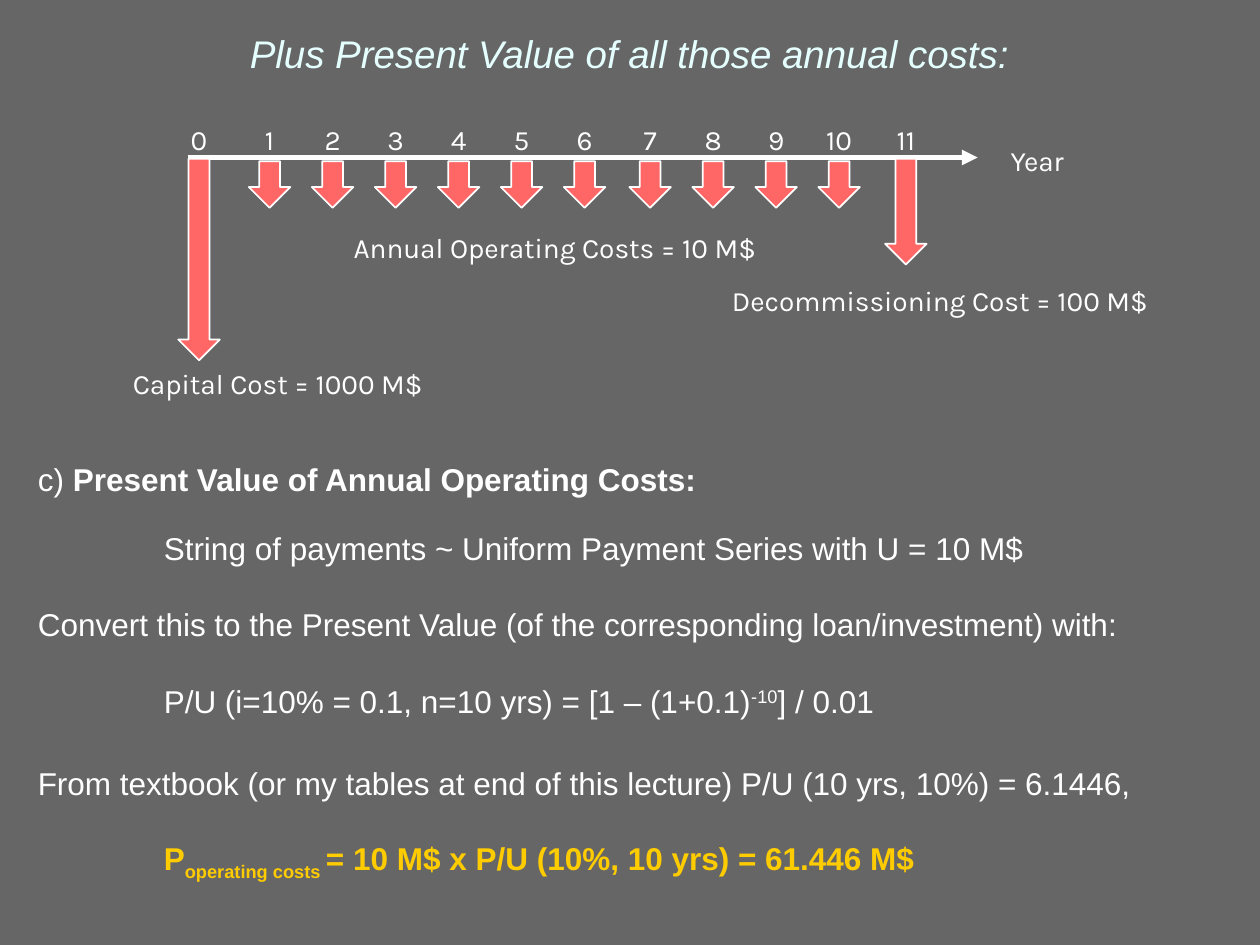
from pptx import Presentation
from pptx.dml.color import RGBColor
from pptx.enum.shapes import MSO_CONNECTOR, MSO_SHAPE
from pptx.enum.text import MSO_ANCHOR, PP_ALIGN
from pptx.oxml.ns import qn
from pptx.util import Inches, Pt
from lxml.etree import SubElement

WHITE, GOLD, RED = "FFFFFF", "FFCC00", "FF6666"
LEFT, MID = PP_ALIGN.LEFT, PP_ALIGN.CENTER

TITLE = "Plus Present Value of all those annual costs:"
NOTES = [
    ("Decommissioning Cost = 100 M$", 5.5, 2.2, 3.92, MID),
    ("Capital Cost = 1000 M$", 0.83, 2.86, 2.75, MID),
    ("Annual Operating Costs = 10 M$", 1.64, 1.78, 5.53, MID),
    ("Year", 7.97, 1.09, 0.78, LEFT),
]
BODY = [
    (0, 0, WHITE, [("c) ", False, 0), ("Present Value of Annual Operating Costs:", True, 0)]),
    (18, 1, WHITE, [("String of payments ~ Uniform Payment Series with U = 10 M$", False, 0)]),
    (22, 0, WHITE, [("Convert this to the Present Value (of the corresponding loan/investment) with:", False, 0)]),
    (22, 1, WHITE, [("P/U (i=10% = 0.1, n=10 yrs) = [1 – (1+0.1)", False, 0),
                    ("-10", False, 30), ("] / 0.01", False, 0)]),
    (25.5, 0, WHITE, [("From textbook (or my tables at end of this lecture) P/U (10 yrs, 10%) = 6.1446,", False, 0)]),
    (21, 1, GOLD, [("P", True, 0), ("operating costs ", True, -25),
                   ("= 10 M$ x P/U (10%, 10 yrs) = 61.446 M$", True, 0)]),
]
YEARS = [(0, 1.58, 1.26, 1.6)]
YEARS += [(n, 2.14 + 0.5 * (n - 1) + (0.02 if n > 6 else 0), 1.28, 0.37) for n in range(1, 11)]
YEARS += [(11, 7.19, 1.26, 0.84)]
HEAD = 0.33


def color(code):
    return RGBColor.from_string(code)


def style(font, name, size, code):
    font.name, font.size = name, Pt(size)
    font.color.rgb = color(code)


def frame(x, y, w, h):
    text = slide.shapes.add_textbox(Inches(x), Inches(y), Inches(w), Inches(h)).text_frame
    text.word_wrap = True
    text.margin_left = text.margin_right = Inches(0.05)
    text.margin_top = text.margin_bottom = Inches(0.05)
    return text


def label(words, x, y, w, align, h=0.36, name="Karla", size=16, code=WHITE):
    text = frame(x, y, w, h)
    text.text = words
    para = text.paragraphs[0]
    para.alignment = align
    style(para.runs[0].font, name, size, code)
    return text


def arrow(mid, top, high):
    shape = slide.shapes.add_shape(MSO_SHAPE.DOWN_ARROW, Inches(mid - HEAD / 2),
                                   Inches(top), Inches(HEAD), Inches(high))
    shape.shadow.inherit = False
    shape.fill.solid()
    shape.fill.fore_color.rgb = color(RED)
    shape.line.color.rgb = color(WHITE)
    shape.line.width = Pt(1)


def axis():
    line = slide.shapes.add_connector(MSO_CONNECTOR.STRAIGHT, Inches(1.49), Inches(1.25),
                                      Inches(7.76), Inches(1.25))
    line.line.color.rgb = color(WHITE)
    line.line.width = Pt(3)
    SubElement(line.line._get_or_add_ln(), qn("a:tailEnd"), type="triangle")
    SubElement(line._element.spPr, qn("a:effectLst"))


def body():
    text = frame(0.25, 3.6, 9.58, 3.65)
    for i, (gap, level, code, parts) in enumerate(BODY):
        para = text.add_paragraph() if i else text.paragraphs[0]
        para.space_before = Pt(gap)
        para._p.get_or_add_pPr().set("marL", str(Inches(level)))
        for words, bold, shift in parts:
            run = para.add_run()
            run.text = words
            style(run.font, "Arial", 18, code)
            run.font.bold = bold
            if shift:
                run._r.get_or_add_rPr().set("baseline", str(shift * 1000))


deck = Presentation()
deck.slide_width, deck.slide_height = Inches(10), Inches(7.5)
slide = deck.slides.add_slide(deck.slide_layouts[6])
slide.background.fill.solid()
slide.background.fill.fore_color.rgb = color("666666")

head = label(TITLE, 0.33, 0.17, 9.33, MID, 0.5, "Arial", 22, "E5FFFF")
head.vertical_anchor = MSO_ANCHOR.MIDDLE
head.paragraphs[0].runs[0].font.italic = True
body()
axis()
for year, mid, top, high in YEARS:
    arrow(mid, top, high)
    label(str(year), mid - 0.3, 0.92, 0.6, MID)
for note in NOTES:
    label(*note)
deck.save("out.pptx")
